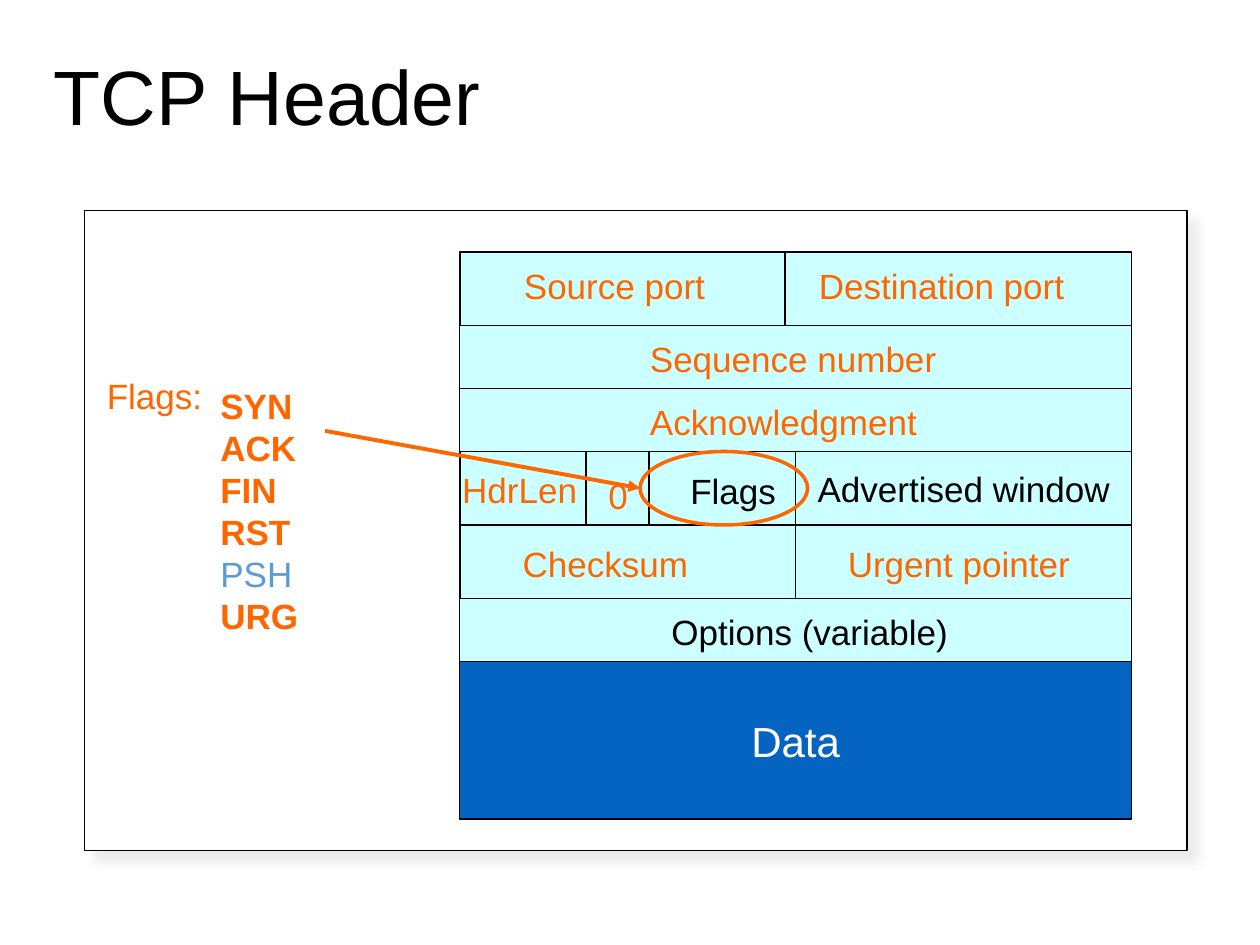
from itertools import accumulate

from lxml import etree
from pptx import Presentation
from pptx import util as u
from pptx.dml.color import RGBColor
from pptx.enum import shapes, text
from pptx.oxml.ns import qn

COLORS = {
    "black": "000000", "white": "FFFFFF", "cell": "CCFFFF", "data": "0563C1",
    "orange": "FF6600", "blue": "5B9BD5", "shadow": "E7E6E6",
}
FONT = "Arial"
LEFT, TOP, WIDTH = 3.65, 2, 5.33
TALL, SHORT, DATA = 7 / 12, 0.5, 1.25

ROWS = [
    (TALL, [2.58, 2.75]),
    (SHORT, [WIDTH]),
    (SHORT, [WIDTH]),
    (TALL, [WIDTH / 2] * 2),
    (TALL, [WIDTH / 2] * 2),
    (SHORT, [WIDTH]),
]
LABELS = [
    ("Source port", 4.06, 2.05, 1.64, "orange"),
    ("Destination port", 6.4, 2.05, 2.15, "orange"),
    ("Sequence number", 5.06, 2.63, 2.5, "orange"),
    ("Acknowledgment", 5.06, 3.13, 2.35, "orange"),
    ("Advertised window", 6.39, 3.66, 2.52, "black"),
    ("Flags", 5.38, 3.68, 0.88, "black"),
    ("0", 4.73, 3.72, 0.36, "orange"),
    ("Checksum", 4.05, 4.26, 1.53, "orange"),
    ("Urgent pointer", 6.63, 4.26, 1.98, "orange"),
    ("Options (variable)", 5.23, 4.8, 2.41, "black"),
]
FLAGS = ["SYN", "ACK", "FIN", "RST", "PSH", "URG"]
PLAIN_FLAG = "PSH"
DIVIDERS = [4.65, 5.15]


def rgb(name):
    return RGBColor.from_string(COLORS[name])


def write(shape, content, size=20, color="black", bold=False, wrap=False,
          anchor=text.MSO_ANCHOR.TOP, align=text.PP_ALIGN.LEFT, spacing=None,
          fit=text.MSO_AUTO_SIZE.NONE):
    frame = shape.text_frame
    frame.word_wrap = wrap
    frame.auto_size = fit
    frame.vertical_anchor = anchor
    frame.text = content
    for para in frame.paragraphs:
        para.alignment = align
        para.line_spacing = spacing
        for span in para.runs:
            span.font.name = FONT
            span.font.size = u.Pt(size)
            span.font.bold = bold
            span.font.color.rgb = rgb(color)


def add_text(slide, content, left, top, width, height=0.43, fill=None,
             fit=text.MSO_AUTO_SIZE.SHAPE_TO_FIT_TEXT, **style):
    box = slide.shapes.add_textbox(*map(u.Inches, (left, top, width, height)))
    if fill:
        box.fill.solid()
        box.fill.fore_color.rgb = rgb(fill)
    write(box, content, fit=fit, **style)
    return box


def add_outline(slide, left, top, width, height, fill=None, line="black",
                weight=0.75, kind=shapes.MSO_SHAPE.RECTANGLE):
    shape = slide.shapes.add_shape(kind, *map(u.Inches, (left, top, width, height)))
    shape.shadow.inherit = False
    if fill:
        shape.fill.solid()
        shape.fill.fore_color.rgb = rgb(fill)
    else:
        shape.fill.background()
    shape.line.color.rgb = rgb(line)
    shape.line.width = u.Pt(weight)
    return shape


def add_line(slide, start, end, color="black", weight=0.75, arrow=False):
    line = slide.shapes.add_connector(
        shapes.MSO_CONNECTOR.STRAIGHT, *map(u.Inches, (*start, *end)))
    line.line.color.rgb = rgb(color)
    line.line.width = u.Pt(weight)
    if arrow:
        etree.SubElement(line.line._get_or_add_ln(), qn("a:tailEnd"), type="triangle")
    etree.SubElement(line._element.spPr, qn("a:effectLst"))


def cast_shadow(shape):
    effects = shape._element.spPr.find(qn("a:effectLst"))
    shadow = etree.SubElement(
        effects, qn("a:outerShdw"), blurRad=str(u.Pt(5)), dist=str(u.Pt(8.5)),
        dir=str(45 * 60000), algn="ctr", rotWithShape="0")
    color = etree.SubElement(shadow, qn("a:srgbClr"), val=COLORS["shadow"])
    etree.SubElement(color, qn("a:alpha"), val="75000")


def main():
    deck = Presentation()
    deck.slide_width, deck.slide_height = u.Inches(10), u.Inches(7.5)
    page = deck.slides.add_slide(deck.slide_layouts[6])

    cast_shadow(add_outline(page, 0.67, 1.67, 8.75, 5.08, fill="white"))
    add_text(page, "TCP Header", 0.33, 0.42, 8.82, 0.75, size=44, wrap=True,
             anchor=text.MSO_ANCHOR.MIDDLE, spacing=0.9,
             fit=text.MSO_AUTO_SIZE.NONE)

    tops = list(accumulate((height for height, _ in ROWS), initial=TOP))
    for top, (height, widths) in zip(tops, ROWS):
        for left, width in zip(accumulate(widths, initial=LEFT), widths):
            add_outline(page, left, top, width, height, fill="cell")
    data = add_outline(page, LEFT, tops[-1], WIDTH, DATA, fill="data")
    write(data, "Data", size=24, color="white",
          anchor=text.MSO_ANCHOR.MIDDLE, align=text.PP_ALIGN.CENTER)

    flag_top, flag_bottom = tops[3], tops[4]
    for x in DIVIDERS:
        add_line(page, (x, flag_top), (x, flag_bottom))
    for content, left, top, width, color in LABELS:
        add_text(page, content, left, top, width, fill="cell", color=color)
    add_text(page, "HdrLen", 3.57, 3.67, 1.17, color="orange", wrap=True)

    add_text(page, "Flags:", 0.75, 2.92, 0.96, color="orange")
    flags = add_text(page, "\n".join(FLAGS), 1.65, 3, 0.82, 2.1,
                     color="orange", bold=True)
    plain = flags.text_frame.paragraphs[FLAGS.index(PLAIN_FLAG)].runs[0].font
    plain.bold = False
    plain.color.rgb = rgb("blue")

    ring_left = 5.08
    add_outline(page, ring_left, flag_top, 1.33, TALL, line="orange", weight=2,
                kind=shapes.MSO_SHAPE.OVAL)
    add_line(page, (2.58, 3.42), (ring_left, flag_top + TALL / 2),
             color="orange", weight=2.25, arrow=True)
    deck.save("out.pptx")


if __name__ == "__main__":
    main()
